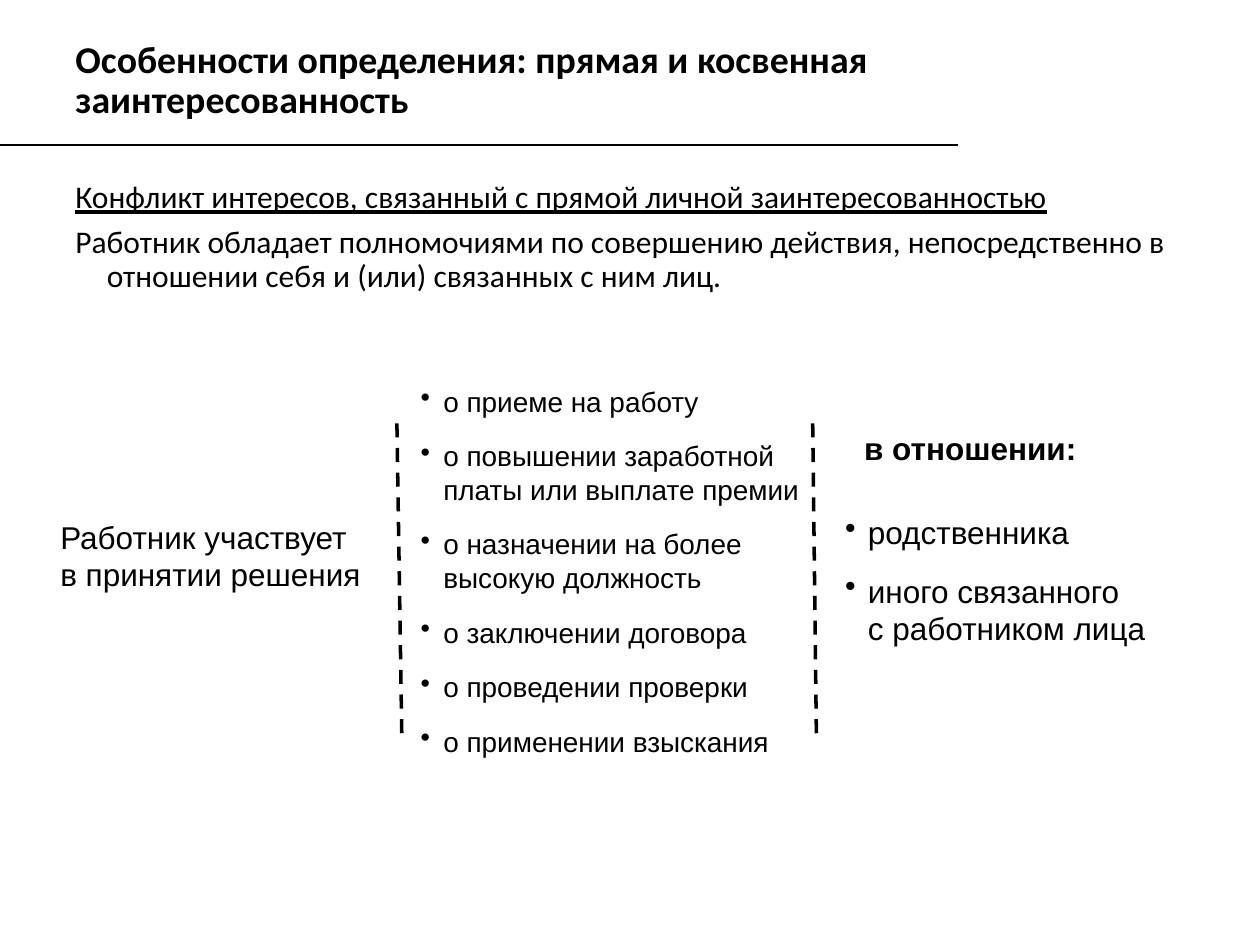
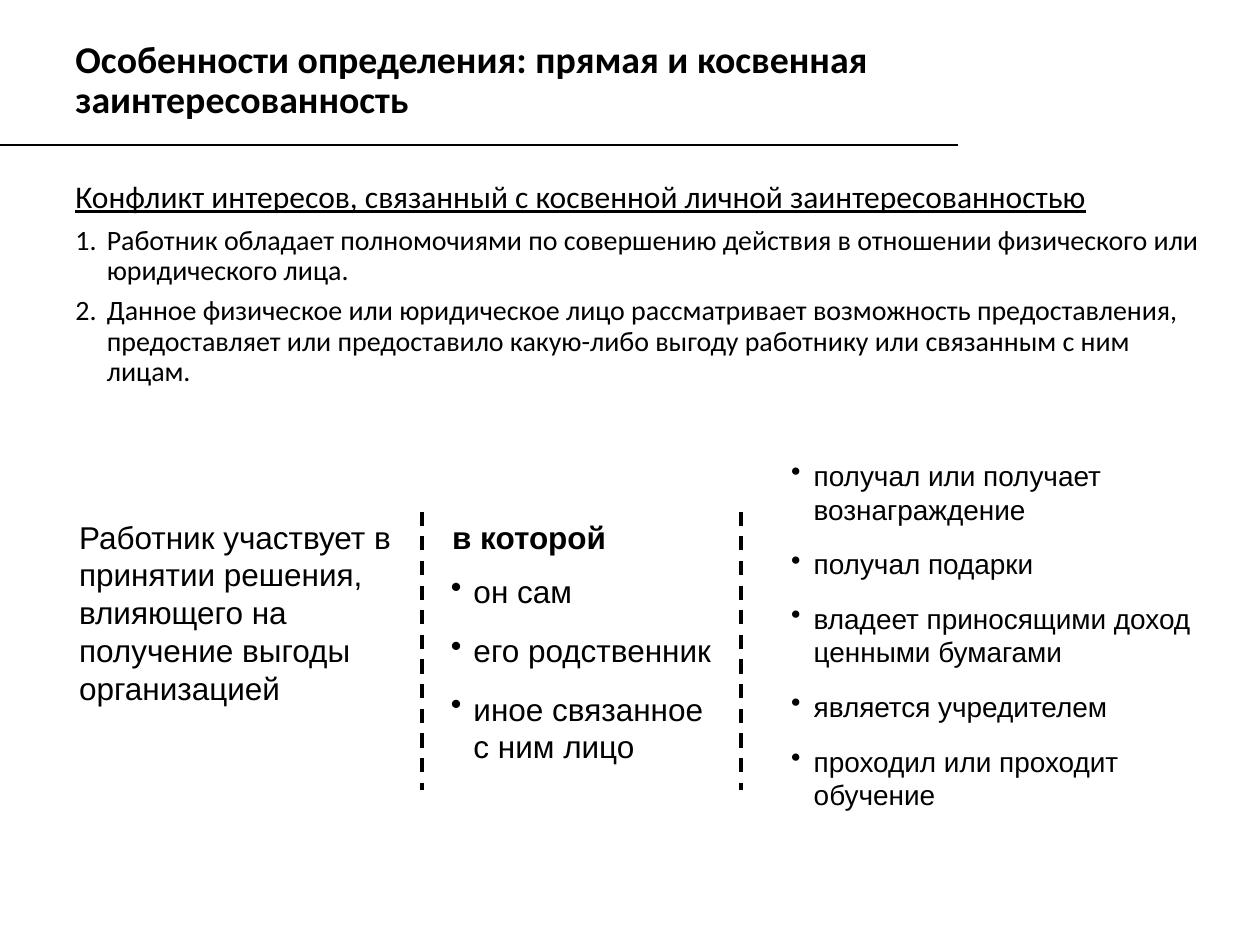
import pptx
import pptx.dml.color
import pptx.enum.dml
import pptx.enum.text
import pptx.oxml.ns
import pptx.util
from lxml import etree

Inches = pptx.util.Inches
Pt = pptx.util.Pt

# Shared style
BLACK = "000000"
TITLE = "Особенности определения: прямая и косвенная заинтересованность"
HEAD = {"name": "Calibri", "size": Pt(21.6), "bold": True}
INTRO = {"name": "Calibri", "size": Pt(18)}
INTRO_HEAD = {**INTRO, "underline": True}
POINT = {"name": "Calibri", "size": Pt(16)}
LARGE = {"name": "Arial", "size": Pt(18)}
SMALL = {"name": "Arial", "size": Pt(16)}
LABEL = {**LARGE, "bold": True}

INTRO_SPACING = {"line_spacing": 0.9, "space_after": Pt(6)}
LIST_SPACING = {"space_before": Pt(6), "space_after": Pt(6)}
BULLET = ("buChar", {"char": "•"})
NUMBER = ("buAutoNum", {"type": "arabicPeriod"})


def color(hex_string):
    return pptx.dml.color.RGBColor.from_string(hex_string)


def set_all(target, values):
    for name, value in values.items():
        setattr(target, name, value)


def add_box(s, at, grow=True):
    tf = s.shapes.add_textbox(*map(Inches, at)).text_frame
    tf.word_wrap = True
    if grow:
        tf.auto_size = pptx.enum.text.MSO_AUTO_SIZE.SHAPE_TO_FIT_TEXT
    return tf


def add_paragraph(tf, text, font, spacing=None, left=0, hang=0, marker=None):
    """Fill the empty first paragraph, or add one; a line feed is a line break."""
    p = tf.paragraphs[0] if not tf.text else tf.add_paragraph()
    p.text = text
    set_all(p, spacing or {})
    for r in p.runs:
        set_all(r.font, font)
        r.font.color.rgb = color(BLACK)
    pPr = p._p.get_or_add_pPr()
    pPr.set("marL", str(Inches(left)))
    pPr.set("indent", str(Inches(-hang)))
    if marker:
        tag, values = marker
        etree.SubElement(pPr, pptx.oxml.ns.qn("a:" + tag), values)


def add_text(s, at, text, font, left=0):
    add_paragraph(add_box(s, at), text, font, left=left)


def add_list(s, at, items, font):
    tf = add_box(s, at)
    for item in items:
        add_paragraph(tf, item, font, LIST_SPACING, 0.18, 0.18, BULLET)


def add_intro(s, height, heading, items, font, marker=None):
    tf = add_box(s, (0.5, 1.39, 9.23, height), grow=False)
    add_paragraph(tf, heading, INTRO_HEAD, INTRO_SPACING, 0.25, 0.25)
    for item in items:
        add_paragraph(tf, item, font, INTRO_SPACING, 0.25, 0.25, marker)


def add_line(s, x1, y1, x2, y2, width, dashed=False):
    line = s.shapes.add_connector(
        pptx.enum.shapes.MSO_CONNECTOR.STRAIGHT, *map(Inches, (x1, y1, x2, y2)))
    line.line.color.rgb = color(BLACK)
    line.line.width = Pt(width)
    if dashed:
        line.line.dash_style = pptx.enum.dml.MSO_LINE.DASH
    etree.SubElement(line._element.spPr, pptx.oxml.ns.qn("a:effectLst"))


def add_slide(prs):
    """Blank slide with the common title and the rule under it."""
    s = prs.slides.add_slide(prs.slide_layouts[6])
    tf = add_box(s, (0.5, 0.3, 8.99, 0.69), grow=False)
    tf.vertical_anchor = pptx.enum.text.MSO_ANCHOR.MIDDLE
    add_paragraph(tf, TITLE, HEAD, {"line_spacing": 0.9})
    add_line(s, 0, 1.15, 7.6, 1.15, 0.75)
    return s


def direct_interest(prs):
    s = add_slide(prs)
    add_intro(s, 1.42, "Конфликт интересов, связанный с прямой личной заинтересованностью", [
        "Работник обладает полномочиями по совершению действия, непосредственно "
        "в отношении себя и (или) связанных с ним лиц."], INTRO)

    # Who decides, what is decided, about whom
    add_text(s, (0.38, 4.06, 2.81, 0.7), "Работник участвует \nв принятии решения", LARGE)
    add_list(s, (3.24, 3, 3.22, 3.1), [
        "о приеме на работу",
        "о повышении заработной платы или выплате премии",
        "о назначении на более высокую должность",
        "о заключении договора",
        "о проведении проверки",
        "о применении взыскания"], SMALL)
    add_text(s, (6.69, 3.36, 2.53, 0.4), "в отношении:", LABEL, left=0.07)
    add_list(s, (6.61, 4.02, 2.82, 1.17), [
        "родственника",
        "иного связанного \nс работником лица"], LARGE)
    for top_x, bottom_x in ((3.15, 3.19), (6.45, 6.48)):
        add_line(s, top_x, 3.36, bottom_x, 5.89, 2, dashed=True)


def indirect_interest(prs):
    s = add_slide(prs)
    add_intro(s, 1.97, "Конфликт интересов, связанный с косвенной личной заинтересованностью", [
        "Работник обладает полномочиями по совершению действия в отношении "
        "физического или юридического лица.",
        "Данное физическое или юридическое лицо рассматривает возможность "
        "предоставления, предоставляет или предоставило какую-либо выгоду "
        "работнику или связанным с ним лицам."], POINT, NUMBER)

    # Who decides, who is linked to the organisation, how
    add_text(s, (0.53, 4.06, 2.74, 1.6),
             "Работник участвует в принятии решения, влияющего на получение "
             "выгоды организацией", LARGE)
    add_text(s, (3.42, 4.06, 2.53, 0.4), "в которой", LABEL, left=0.07)
    add_list(s, (3.48, 4.49, 2.4, 1.64), [
        "он сам",
        "его родственник",
        "иное связанное \nс ним лицо"], LARGE)
    add_list(s, (6.18, 3.59, 3.39, 2.93), [
        "получал или получает вознаграждение",
        "получал подарки",
        "владеет приносящими доход ценными бумагами",
        "является учредителем",
        "проходил или проходит обучение"], SMALL)
    for x in (3.35, 5.88):
        add_line(s, x, 4.06, x, 6.27, 2, dashed=True)


def main():
    prs = pptx.Presentation()
    prs.slide_width, prs.slide_height = Inches(10), Inches(7.5)
    direct_interest(prs)
    indirect_interest(prs)
    prs.save("out.pptx")


if __name__ == "__main__":
    main()
